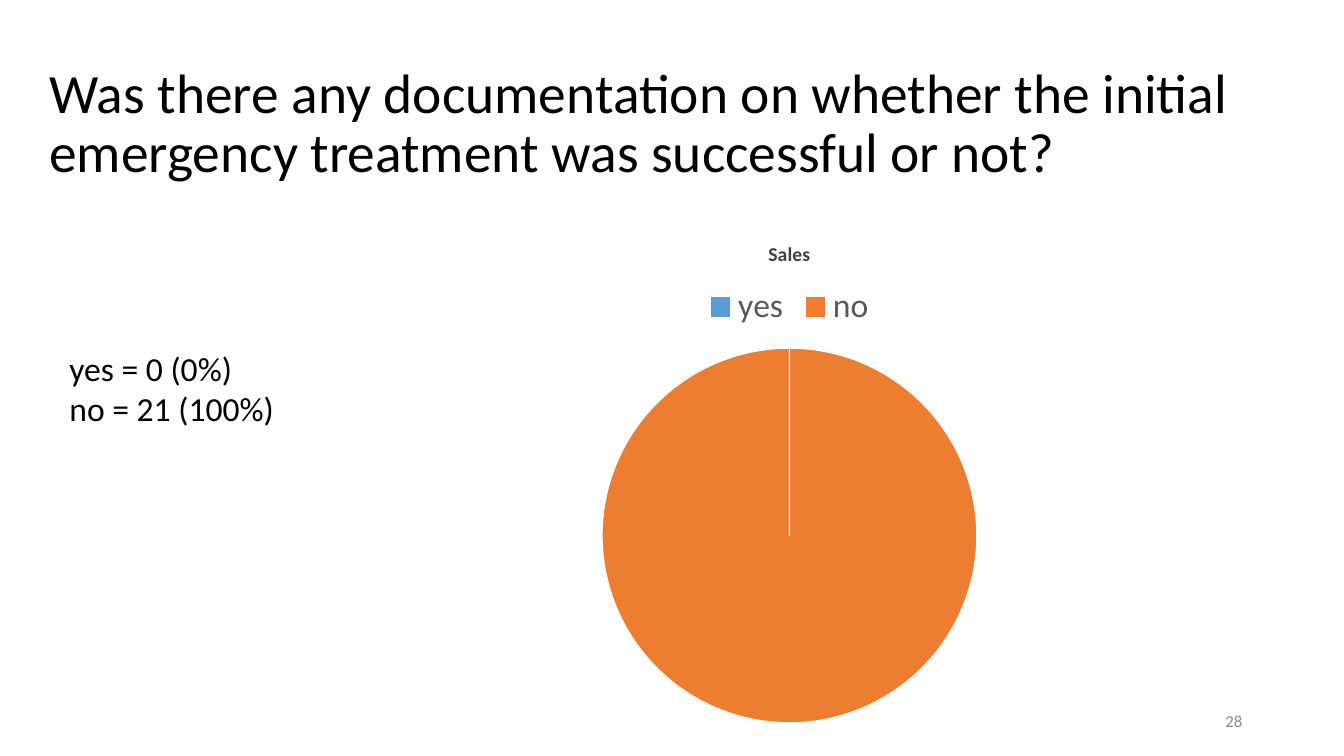
import pptx
import pptx.chart.data
import pptx.dml.color
import pptx.enum.chart
import pptx.enum.text
import pptx.util
from dataclasses import dataclass

Inches = pptx.util.Inches
ANCHOR = pptx.enum.text.MSO_ANCHOR
ALIGN = pptx.enum.text.PP_ALIGN


@dataclass(frozen=True)
class Theme:
    font: str = "Calibri"
    ink: str = "000000"
    chart_title: str = "404040"
    legend: str = "595959"
    muted: str = "8C8C8C"
    paper: str = "FFFFFF"
    slices: tuple = ("5B9BD5", "ED7D31")
    title_size: float = 39.6
    body_size: float = 24
    chart_title_size: float = 14
    chart_size: float = 10
    number_size: float = 12


def rgb(value):
    return pptx.dml.color.RGBColor.from_string(value)


class SlideBuilder:
    def __init__(self, presentation, theme):
        self.theme = theme
        self.slide = presentation.slides.add_slide(presentation.slide_layouts[5])

    def style(self, font, size, color, bold=False):
        font.name = self.theme.font
        font.size = pptx.util.Pt(size)
        font.bold = bold
        font.color.rgb = rgb(color)

    def title(self, text, left, top, width, height):
        title = self.slide.shapes.title
        title.left, title.top = Inches(left), Inches(top)
        title.width, title.height = Inches(width), Inches(height)
        frame = title.text_frame
        frame.text = text
        frame.word_wrap = True
        frame.auto_size = pptx.enum.text.MSO_AUTO_SIZE.NONE
        frame.vertical_anchor = ANCHOR.MIDDLE
        heading = frame.paragraphs[0]
        heading.alignment = ALIGN.LEFT
        heading.line_spacing = 0.9
        self.style(heading.font, self.theme.title_size, self.theme.ink)

    def text(self, lines, left, top, width, height, size, color,
             align=ALIGN.LEFT, anchor=ANCHOR.TOP):
        frame = self.slide.shapes.add_textbox(
            Inches(left), Inches(top), Inches(width), Inches(height)).text_frame
        frame.word_wrap = True
        frame.vertical_anchor = anchor
        frame.text = "\n".join(lines)
        for paragraph in frame.paragraphs:
            paragraph.alignment = align
            self.style(paragraph.font, size, color)

    def pie(self, name, shares, left, top, width, height):
        theme = self.theme
        data = pptx.chart.data.CategoryChartData()
        data.categories = list(shares)
        data.add_series(name, list(shares.values()))
        chart = self.slide.shapes.add_chart(
            pptx.enum.chart.XL_CHART_TYPE.PIE, Inches(left), Inches(top),
            Inches(width), Inches(height), data).chart
        self.style(chart.font, theme.chart_size, theme.ink)

        # Chart title and legend
        chart.has_title = True
        chart.chart_title.include_in_layout = False
        caption = chart.chart_title.text_frame
        caption.text = name
        self.style(caption.paragraphs[0].font, theme.chart_title_size,
                   theme.chart_title, bold=True)
        chart.has_legend = True
        chart.legend.position = pptx.enum.chart.XL_LEGEND_POSITION.TOP
        chart.legend.include_in_layout = False
        self.style(chart.legend.font, theme.body_size, theme.legend)

        # Slices
        plot = chart.plots[0]
        plot.vary_by_categories = True
        for index, color in enumerate(theme.slices):
            slice_format = plot.series[0].points[index].format
            slice_format.fill.solid()
            slice_format.fill.fore_color.rgb = rgb(color)
            slice_format.line.color.rgb = rgb(theme.paper)
            slice_format.line.width = pptx.util.Pt(1)


def main():
    presentation = pptx.Presentation()
    presentation.slide_width = Inches(13.33)
    presentation.slide_height = Inches(7.5)
    theme = Theme()
    builder = SlideBuilder(presentation, theme)

    # Question
    builder.title("Was there any documentation on whether the initial "
                  "emergency treatment was successful or not?",
                  0.39, 0.29, 12.02, 1.9)

    # Answers as a chart and in figures
    builder.pie("Sales", {"yes": 0, "no": 100}, 3.24, 2.19, 9.18, 5.12)
    builder.text(["yes = 0 (0%)", "no = 21 (100%)"], 0.59, 3.4, 2.76, 1.24,
                 theme.body_size, theme.ink)

    # Slide number
    builder.text(["28"], 9.42, 6.95, 3, 0.4, theme.number_size, theme.muted,
                 ALIGN.RIGHT, ANCHOR.MIDDLE)

    presentation.save("out.pptx")


if __name__ == "__main__":
    main()
